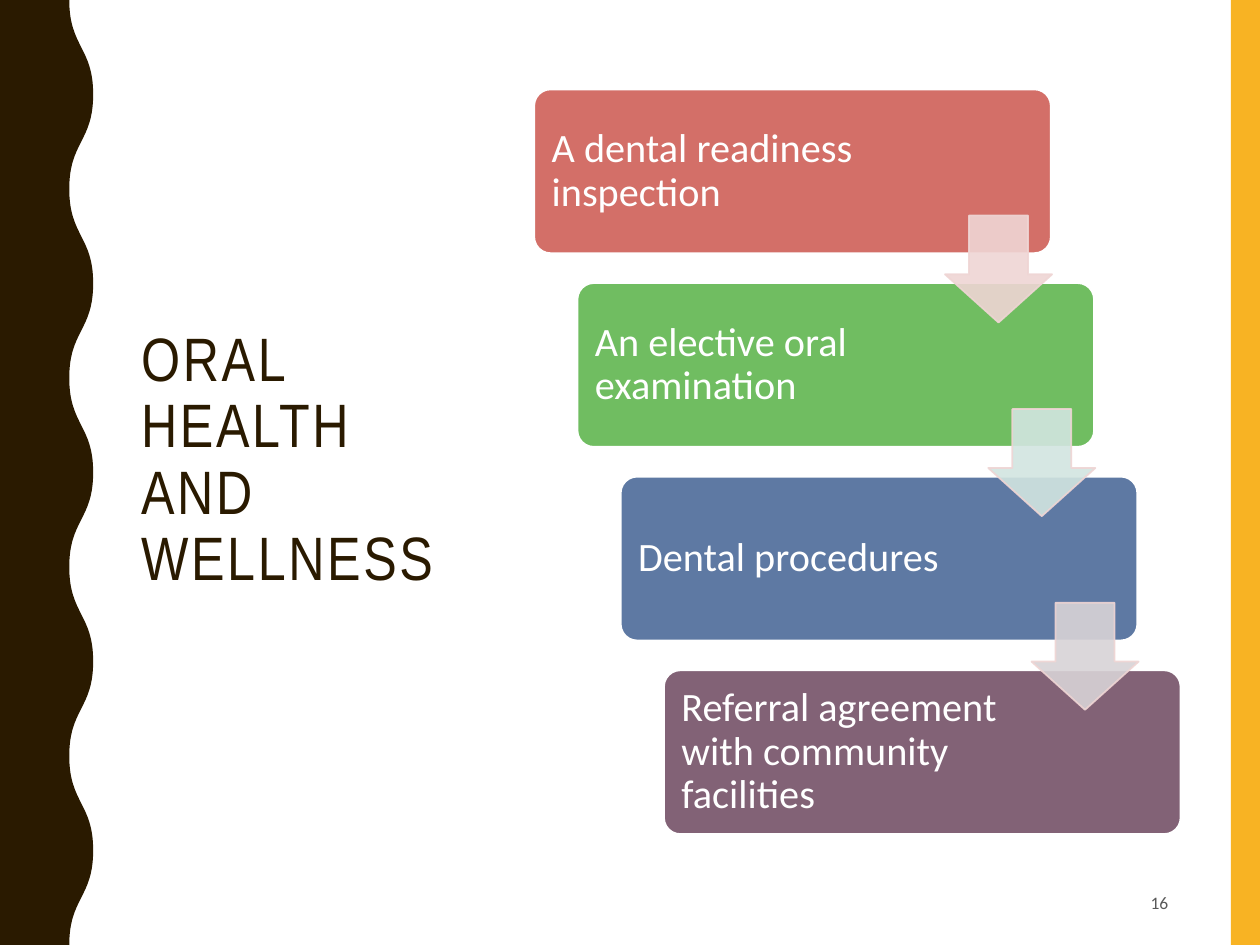
from lxml import etree
from pptx import Presentation
from pptx import util as u
from pptx.dml.color import RGBColor
from pptx.enum import shapes, text
from pptx.oxml.ns import qn

COLORS = {
    "brown": "2A1A00", "gold": "F8B323", "white": "FFFFFF", "gray": "595959",
    "red": "D36F68", "green": "70BD61", "blue": "5E79A3", "purple": "826276",
    "pink": "EFD5D4", "mint": "D2E5E0", "silver": "D8D3D6",
}
STEPS = [
    ("A dental readiness inspection", "red", 2.59),
    ("An elective oral examination", "green", 2.84),
    ("Dental procedures", "blue", 2.84),
    ("Referral agreement with community facilities", "purple", 2.84),
]
ARROWS = ["pink", "mint", "silver"]


def paint(fill, color, alpha=None):
    """Make a fill solid, with an optional opacity in percent."""
    fill.solid()
    fill.fore_color.rgb = RGBColor.from_string(COLORS[color])
    if alpha:
        clr = fill._xPr.find(qn("a:solidFill"))[0]
        etree.SubElement(clr, qn("a:alpha")).set("val", str(alpha * 1000))


def add_shape(s, kind, box, color, line=None, alpha=None, adj=()):
    """Add a preset shape without shadow at box (left, top, width, height)."""
    sp = s.shapes.add_shape(kind, *map(u.Inches, box))
    sp.shadow.inherit = False
    for i, value in enumerate(adj):
        sp.adjustments[i] = value
    paint(sp.fill, color, alpha)
    if line:
        paint(sp.line.fill, line, alpha)
        sp.line.width = u.Pt(1)
    else:
        sp.line.fill.background()
    return sp


def write(sp, words, size, color, font="Calibri", align=text.PP_ALIGN.LEFT,
          spacing=None, after=0, tracking=None, inset=None):
    """Write one formatted, vertically centred paragraph into a shape."""
    tf = sp.text_frame
    tf.word_wrap = True
    tf.auto_size = text.MSO_AUTO_SIZE.NONE
    tf.vertical_anchor = text.MSO_ANCHOR.MIDDLE
    if inset is not None:
        tf.margin_left = tf.margin_right = u.Inches(inset)
        tf.margin_top = tf.margin_bottom = u.Inches(inset)
    p = tf.paragraphs[0]
    p.alignment = align
    p.line_spacing = spacing
    p.space_after = u.Pt(after)
    r = p.add_run()
    r.text = words
    r.font.size = u.Pt(size)
    r.font.name = font
    r.font.color.rgb = RGBColor.from_string(COLORS[color])
    if tracking:
        r.font._element.set("spc", str(int(tracking * 100)))


def add_textbox(s, box, words, **style):
    """Add a text box at box and write into it."""
    write(s.shapes.add_textbox(*map(u.Inches, box)), words, **style)


def bend(segment, start):
    """Turn a straight path segment into an S-curve that leaves start vertically."""
    end = segment[0]
    middle = str((int(start.get("y")) + int(end.get("y"))) // 2)
    segment.tag = qn("a:cubicBezTo")
    for i, pt in enumerate((start, end)):
        control = etree.Element(qn("a:pt"), x=pt.get("x"), y=middle)
        segment.insert(i, control)
    return end


def add_wave(s, box, trough=0.55, waves=5):
    """Draw the side band whose right edge swings between trough and full width."""
    left, top, width, height = box
    turns = waves * 2
    edge = [(left + (width if k % 2 else trough), top + k * height / turns)
            for k in range(turns + 1)]
    corners = [(left, top + height), (left, top)]
    points = [(u.Inches(x), u.Inches(y)) for x, y in edge + corners]
    fb = s.shapes.build_freeform(*points[0])
    fb.add_line_segments(points[1:], close=True)
    sp = fb.convert_to_shape()
    outline = next(sp._element.iter(qn("a:path")))
    start = outline[0][0]
    for segment in outline[1:turns + 1]:
        start = bend(segment, start)
    sp.shadow.inherit = False
    paint(sp.fill, "brown")
    sp.line.fill.background()


def add_title(s, box, words):
    """Place and format the title placeholder."""
    title = s.shapes.title
    title.left, title.top, title.width, title.height = map(u.Inches, box)
    write(title, words, size=35, color="brown", font="Arial Narrow",
          spacing=0.9, tracking=1.5)


def add_staircase(s, box):
    """Lay the grouped steps diagonally across box and join them with arrows."""
    left, top, width, height = box
    w, h, arrow, pad = 4.1, 1.3, 0.85, 0.04
    dx = (width - w) / (len(STEPS) - 1)
    dy = (height - h) / (len(STEPS) - 1)
    group = s.shapes.add_group_shape()
    for i, (words, color, text_w) in enumerate(STEPS):
        x, y = left + i * dx, top + i * dy
        add_shape(group, shapes.MSO_SHAPE.ROUNDED_RECTANGLE, (x, y, w, h), color,
                  line="white", adj=[0.1])
        add_textbox(group, (x + pad, y + pad, text_w, h - 2 * pad), words, size=23,
                    color="white", spacing=0.9, after=8, inset=0.1)
    for i, color in enumerate(ARROWS):
        x = left + i * dx + w - arrow + 0.01
        y = top + i * dy + 1
        add_shape(group, shapes.MSO_SHAPE.DOWN_ARROW, (x, y, arrow, arrow), color,
                  line="pink", alpha=90, adj=[0.55, 0.45])


def main():
    """Build the slide and save it."""
    prs = Presentation()
    prs.slide_width, prs.slide_height = u.Inches(10), u.Inches(7.5)
    s = prs.slides.add_slide(prs.slide_layouts[5])
    add_shape(s, shapes.MSO_SHAPE.RECTANGLE, (9.77, 0, 0.23, 7.5), "gold")
    add_wave(s, (0, 0, 0.74, 7.5))
    add_title(s, (1.02, 0.7, 2.78, 5.92), "ORAL HEALTH AND WELLNESS")
    add_textbox(s, (7.06, 6.97, 2.31, 0.38), "16", size=10, color="gray",
                align=text.PP_ALIGN.RIGHT, after=6)
    add_staircase(s, (4.24, 0.71, 5.13, 5.91))
    prs.save("out.pptx")


if __name__ == "__main__":
    main()
